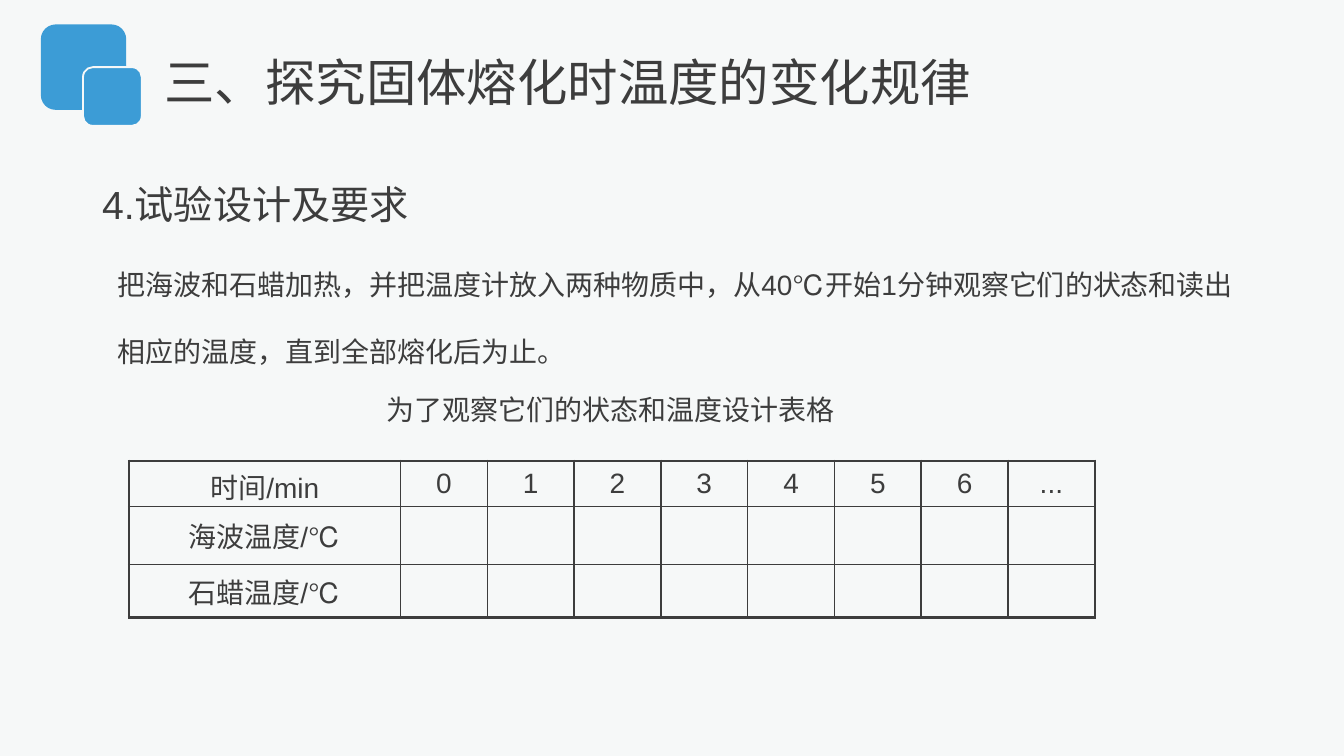
from pptx import Presentation
from pptx.dml.color import RGBColor
from pptx.enum.shapes import MSO_SHAPE as Shape
from pptx.enum.text import MSO_ANCHOR as Anchor, MSO_AUTO_SIZE as AutoSize, PP_ALIGN as Align
from pptx.oxml.ns import qn
from pptx.util import Cm, Pt
from lxml.etree import SubElement

INK, BLUE, PAPER = "3D3D3D", "3C9CD6", "F6F8F8"
FONT = "Arial"


def colour(value):
    return RGBColor.from_string(value)


def apply(target, values):
    for name, value in values.items():
        setattr(target, name, value)


class SlideBuilder:
    margins = {"margin_left": Cm(0.19), "margin_right": Cm(0.19),
               "margin_top": Cm(0.1), "margin_bottom": Cm(0.1)}
    heading_margins = {"margin_left": Cm(0.25), "margin_right": Cm(0.25),
                       "margin_top": Cm(0.13), "margin_bottom": Cm(0.13)}
    cell_margins = {"margin_left": Cm(0.25), "margin_right": Cm(0.25),
                    "margin_top": Cm(0.1), "margin_bottom": Cm(0.1)}

    def __init__(self, page):
        self.page = page
        fill = page.background.fill
        fill.solid()
        fill.fore_color.rgb = colour(PAPER)

    def add_span(self, para, text, size):
        span = para.add_run()
        span.text = text
        apply(span.font, {"name": FONT, "size": Pt(size)})
        span.font.color.rgb = colour(INK)

    def square(self, left, top, side, line):
        box = self.page.shapes.add_shape(
            Shape.ROUNDED_RECTANGLE, Cm(left), Cm(top), Cm(side), Cm(side))
        box.shadow.inherit = False
        box.fill.solid()
        box.fill.fore_color.rgb = colour(BLUE)
        box.line.color.rgb = colour(line)
        box.line.width = Pt(1)

    def text(self, place, text, size, spacing=None, wrap=True, margins=None):
        box = self.page.shapes.add_textbox(*map(Cm, place))
        frame = box.text_frame
        apply(frame, {"word_wrap": wrap, "auto_size": AutoSize.SHAPE_TO_FIT_TEXT,
                      **(margins or self.margins)})
        para = frame.paragraphs[0]
        if spacing:
            para.line_spacing = spacing
        self.add_span(para, text, size)

    def borders(self, cell, widths):
        properties = cell._tc.get_or_add_tcPr()
        for side, width in widths.items():
            line = SubElement(properties, qn(f"a:ln{side}"), w=str(Pt(width)))
            fill = SubElement(line, qn("a:solidFill"))
            SubElement(fill, qn("a:srgbClr"), val=INK)

    def table(self, left, top, widths, heights, rows, size):
        frame = self.page.shapes.add_table(
            len(heights), len(widths), Cm(left), Cm(top),
            Cm(sum(widths)), Cm(sum(heights)))
        table = frame.table
        apply(table, {"first_row": False, "horz_banding": False})
        for column, width in zip(table.columns, widths):
            column.width = Cm(width)
        for row, height in zip(table.rows, heights):
            row.height = Cm(height)
        last_row, last_column = len(heights) - 1, len(widths) - 1
        for r, texts in enumerate(rows):
            for c, text in enumerate(texts):
                cell = table.cell(r, c)
                apply(cell, {"vertical_anchor": Anchor.MIDDLE, **self.cell_margins})
                # Outer edges are heavier than the inner grid
                edges = {"L": c == 0, "R": c == last_column,
                         "T": r == 0, "B": r == last_row}
                self.borders(cell, {side: 1.5 if outer else 1
                                    for side, outer in edges.items()})
                cell.fill.solid()
                cell.fill.fore_color.rgb = colour(PAPER)
                para = cell.text_frame.paragraphs[0]
                para.alignment = Align.CENTER
                if text:
                    self.add_span(para, text, size)
                else:
                    para.font.size = Pt(size)


def main():
    deck = Presentation()
    deck.slide_width, deck.slide_height = Cm(25.4), Cm(14.29)
    builder = SlideBuilder(deck.slides.add_slide(deck.slide_layouts[6]))

    # Corner ornament
    builder.square(0.79, 0.48, 1.58, BLUE)
    builder.square(1.57, 1.27, 1.11, PAPER)

    # Instructions and table caption
    builder.text((2.03, 4.32, 21.97, 2.77),
                 "把海波和石蜡加热，并把温度计放入两种物质中，从40℃开始1分钟观察它们的状态"
                 "和读出相应的温度，直到全部熔化后为止。", 15, spacing=2)
    builder.text((7.11, 7.32, 8.94, 0.84), "为了观察它们的状态和温度设计表格", 15, wrap=False)

    # Recording table
    minutes = [*map(str, range(7)), "..."]
    blanks = [""] * len(minutes)
    builder.table(2.44, 8.71, [5.13] + [1.64] * len(minutes), [0.86, 1.1, 1],
                  [["时间/min", *minutes],
                   ["海波温度/℃", *blanks],
                   ["石蜡温度/℃", *blanks]], 15)

    # Headings
    builder.text((1.68, 3.28, 9.12, 1.14), "4.试验设计及要求", 21,
                 margins=builder.heading_margins)
    builder.text((2.92, 0.86, 17.17, 1.35), "三、探究固体熔化时温度的变化规律", 27)

    deck.save("out.pptx")


if __name__ == "__main__":
    main()
